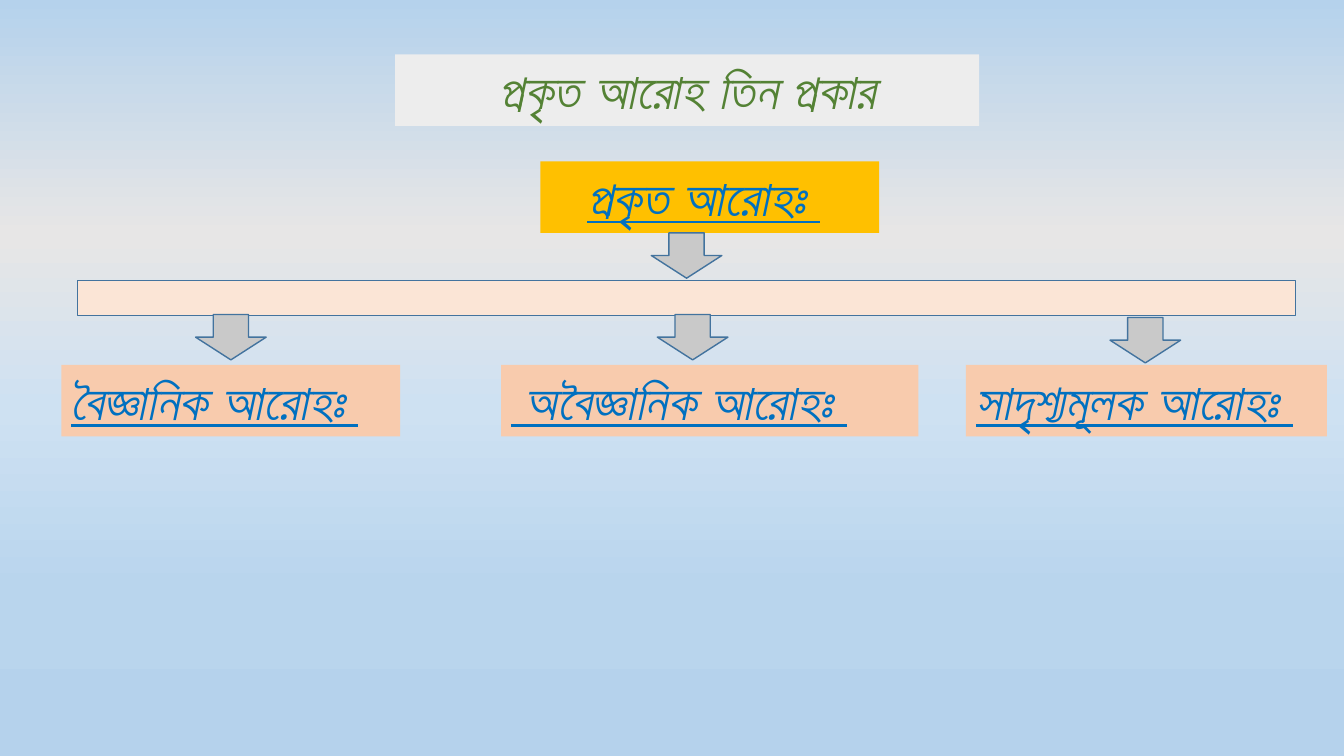
from lxml import etree
from pptx import Presentation
from pptx import util as u
from pptx.dml.color import RGBColor
from pptx.enum import shapes, text
from pptx.oxml.ns import qn

COLORS = {
    "heading": "548235", "heading_fill": "EDEDED",
    "label": "0070C0", "gap": "525252",
    "root_fill": "FFC000", "branch_fill": "F8CBAD",
    "bar": "FBE5D6", "arrow": "C9C9C9", "outline": "43739E",
}
BACKGROUND_STOPS = [(0, "B5D2EC"), (31, "E7E6E6"), (54, "CEE1F2"),
                    (78, "B9D5ED"), (99, "B5D2EC")]
FONT = "Arial"
LABEL_HEIGHT = 0.71
BRANCH_TOP = 3.62
ALIGN = text.PP_ALIGN

# label, left, width, arrow left, arrow top
BRANCHES = [
    ("বৈজ্ঞানিক আরোহঃ ", 0.61, 3.36, 1.94, 3.12),
    (" অবৈজ্ঞানিক আরোহঃ ", 4.97, 4.14, 6.52, 3.12),
    ("সাদৃশ্যমূলক আরোহঃ ", 9.58, 3.58, 11.01, 3.15),
]


def rgb(name):
    return RGBColor.from_string(COLORS[name])


def paint_background(slide):
    """Fill the slide with a vertical gradient of several stops."""
    slide.background.fill.gradient()
    gradient = slide.element.find(".//" + qn("a:gradFill"))
    for child in list(gradient):
        gradient.remove(child)
    stops = etree.SubElement(gradient, qn("a:gsLst"))
    for percent, color in BACKGROUND_STOPS:
        stop = etree.SubElement(stops, qn("a:gs"), pos=str(percent * 1000))
        etree.SubElement(stop, qn("a:srgbClr"), val=color)
    etree.SubElement(gradient, qn("a:lin"), ang="5400000", scaled="0")


def add_run(paragraph, words, size=36, color="label", underline=False):
    run = paragraph.add_run()
    run.text = words
    font = run.font
    font.name, font.size = FONT, u.Pt(size)
    font.bold = font.italic = True
    font.underline = underline
    font.color.rgb = rgb(color)
    # Bengali takes its typeface from the complex-script setting
    etree.SubElement(run._r.get_or_add_rPr(), qn("a:cs"), typeface=FONT)


def add_label(slide, words, left, top, width, fill, color="label",
              align=ALIGN.JUSTIFY, underline=True):
    box = slide.shapes.add_textbox(u.Inches(left), u.Inches(top),
                                   u.Inches(width), u.Inches(LABEL_HEIGHT))
    box.fill.solid()
    box.fill.fore_color.rgb = rgb(fill)
    frame = box.text_frame
    frame.word_wrap = True
    frame.auto_size = text.MSO_AUTO_SIZE.SHAPE_TO_FIT_TEXT
    paragraph = frame.paragraphs[0]
    paragraph.alignment = align
    add_run(paragraph, words, color=color, underline=underline)
    if underline:
        add_run(paragraph, " ", size=32, color="gap")


def add_outlined(slide, kind, left, top, width, height, fill):
    shape = slide.shapes.add_shape(kind, u.Inches(left), u.Inches(top),
                                   u.Inches(width), u.Inches(height))
    shape.shadow.inherit = False
    shape.fill.solid()
    shape.fill.fore_color.rgb = rgb(fill)
    shape.line.color.rgb = rgb("outline")
    shape.line.width = u.Pt(1)


def add_down_arrow(slide, left, top):
    add_outlined(slide, shapes.MSO_SHAPE.DOWN_ARROW, left, top, 0.7, 0.45, "arrow")


def main():
    presentation = Presentation()
    presentation.slide_width = u.Inches(13.33)
    presentation.slide_height = u.Inches(7.5)
    slide = presentation.slides.add_slide(presentation.slide_layouts[6])
    paint_background(slide)

    add_label(slide, "প্রকৃত আরোহ তিন প্রকার", 3.92, 0.54, 5.79, "heading_fill",
              color="heading", align=ALIGN.CENTER, underline=False)
    add_label(slide, "প্রকৃত আরোহঃ ", 5.36, 1.6, 3.36, "root_fill", align=ALIGN.CENTER)
    add_outlined(slide, shapes.MSO_SHAPE.RECTANGLE, 0.77, 2.78, 12.08, 0.35, "bar")
    add_down_arrow(slide, 6.46, 2.31)
    for words, left, width, arrow_left, arrow_top in BRANCHES:
        add_label(slide, words, left, BRANCH_TOP, width, "branch_fill")
        add_down_arrow(slide, arrow_left, arrow_top)

    presentation.save("out.pptx")


if __name__ == "__main__":
    main()
